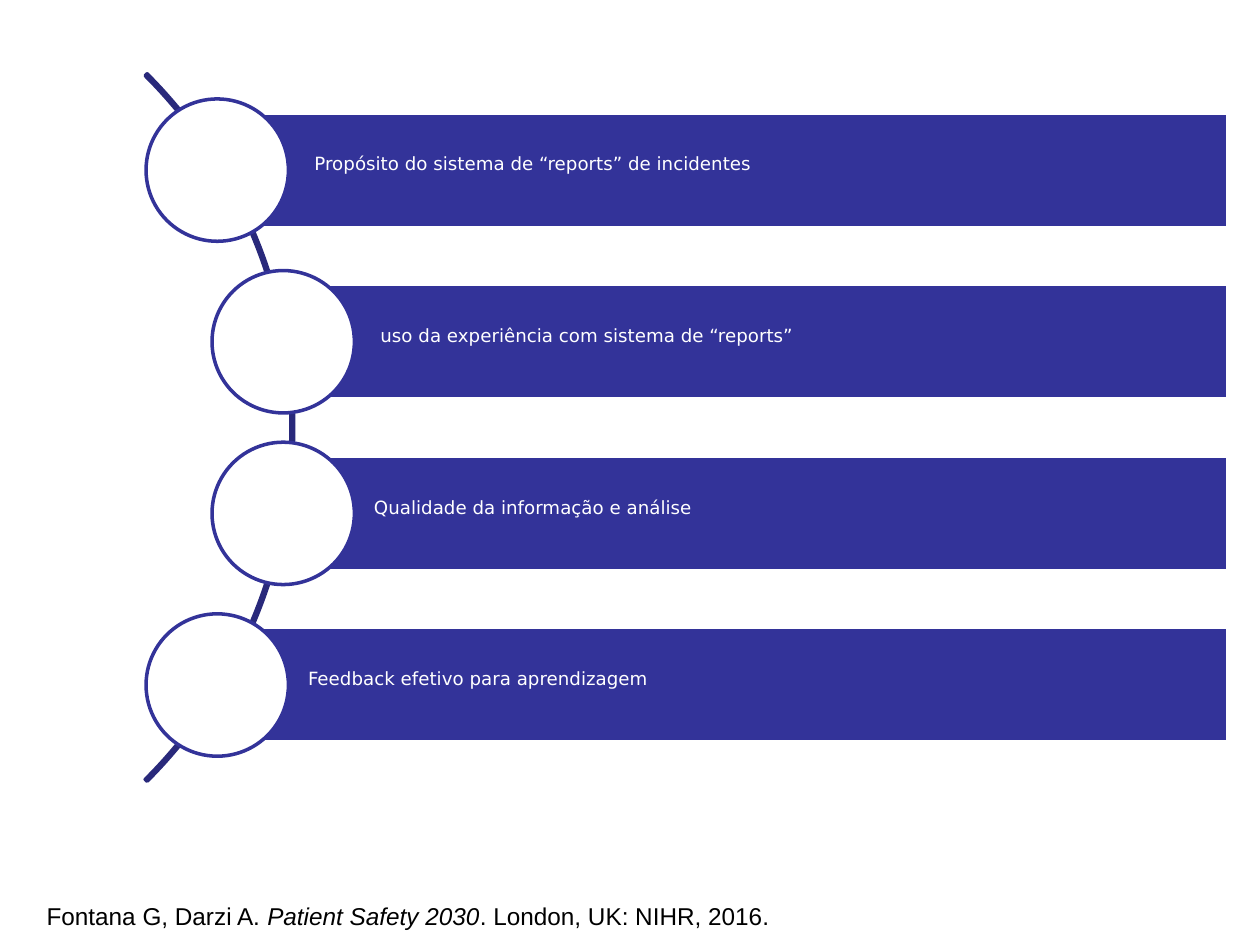
from dataclasses import dataclass

from pptx import Presentation
from pptx.dml.color import RGBColor
from pptx.enum import shapes, text
from pptx.util import Cm, Pt


@dataclass(frozen=True)
class Theme:
    """Colours, fonts and type sizes of the slide."""
    bar: RGBColor = RGBColor(0x33, 0x33, 0x99)
    arc: RGBColor = RGBColor(0x29, 0x29, 0x7B)
    white: RGBColor = RGBColor(0xFF, 0xFF, 0xFF)
    black: RGBColor = RGBColor(0, 0, 0)
    topic_font: str = "DejaVu Sans"
    citation_font: str = "Arial"
    topic_size: Pt = Pt(18)
    citation_size: Pt = Pt(24)
    outline: Pt = Pt(2)


THEME = Theme()
TOPICS = [
    ("Propósito do sistema de “reports” de incidentes", 0, 0.13),
    ("uso da experiência com sistema de “reports”", 1.33, 0.13),
    ("Qualidade da informação e análise", 1.33, 0),
    ("Feedback efetivo para aprendizagem", 0, 0),
]
CITATION = [
    ("Fontana G, Darzi A. ", False),
    ("Patient Safety 2030", True),
    (". London, UK: NIHR, 2016.", False),
]


def add_outlined(page, kind, left, top, width, height, line, fill=None):
    """Add a flat preset shape, measured in centimetres."""
    shape = page.shapes.add_shape(kind, Cm(left), Cm(top), Cm(width), Cm(height))
    shape.shadow.inherit = False
    if fill is None:
        shape.fill.background()
    else:
        shape.fill.solid()
        shape.fill.fore_color.rgb = fill
    shape.line.color.rgb = line
    shape.line.width = THEME.outline
    return shape


def format_span(span, font, size, color, italic=False):
    """Style a run as raised text."""
    span.font.name = font
    span.font.size = size
    span.font.color.rgb = color
    span.font.italic = italic
    span._r.get_or_add_rPr().set("baseline", "30000")


def add_arc(page, left, middle, diameter):
    """Draw the thin arc that links the circles."""
    arc = add_outlined(page, shapes.MSO_SHAPE.BLOCK_ARC, left, middle - diameter / 2,
                       diameter, diameter, THEME.arc)
    for index, value in enumerate((189, 27, 0.0027)):
        arc.adjustments[index] = value


def add_topic(page, wording, left, middle, right, indent, height=2.31, diameter=2.87):
    """Draw one labelled bar with a circle centred on its left end."""
    bar = add_outlined(page, shapes.MSO_SHAPE.RECTANGLE, left, middle - height / 2,
                       right - left, height, THEME.white, THEME.bar)
    frame = bar.text_frame
    frame.word_wrap = True
    frame.vertical_anchor = text.MSO_ANCHOR.MIDDLE
    frame.margin_left = Cm(1.83 + indent)
    frame.margin_right = frame.margin_top = frame.margin_bottom = Cm(0.13)
    frame.text = wording
    para = frame.paragraphs[0]
    para.alignment = text.PP_ALIGN.LEFT
    para.line_spacing = 0.9
    format_span(para.runs[0], THEME.topic_font, THEME.topic_size, THEME.white)
    add_outlined(page, shapes.MSO_SHAPE.OVAL, left - diameter / 2, middle - diameter / 2,
                 diameter, diameter, THEME.bar, THEME.white)


def add_topic_list(page, left, top, right, pitch=3.46):
    """Place the arc and the evenly spaced topics along it."""
    add_arc(page, left - 18.63, top + pitch * (len(TOPICS) - 1) / 2, 20.17)
    for row, (wording, offset, indent) in enumerate(TOPICS):
        add_topic(page, wording, left + offset, top + row * pitch, right, indent)


def add_citation(page, left, top, width, height):
    """Write the reference at the foot of the slide."""
    box = page.shapes.add_textbox(Cm(left), Cm(top), Cm(width), Cm(height))
    box.text_frame.word_wrap = False
    box.text_frame.auto_size = text.MSO_AUTO_SIZE.SHAPE_TO_FIT_TEXT
    para = box.text_frame.paragraphs[0]
    for wording, italic in CITATION:
        span = para.add_run()
        span.text = wording
        format_span(span, THEME.citation_font, THEME.citation_size, THEME.black, italic)


def main():
    """Build and save the deck."""
    deck = Presentation()
    deck.slide_width, deck.slide_height = Cm(25.4), Cm(19.05)
    page = deck.slides.add_slide(deck.slide_layouts[6])
    add_topic_list(page, left=4.38, top=3.43, right=24.75)
    add_citation(page, left=0.69, top=17.93, width=17.6, height=0.94)
    deck.save("out.pptx")


if __name__ == "__main__":
    main()
